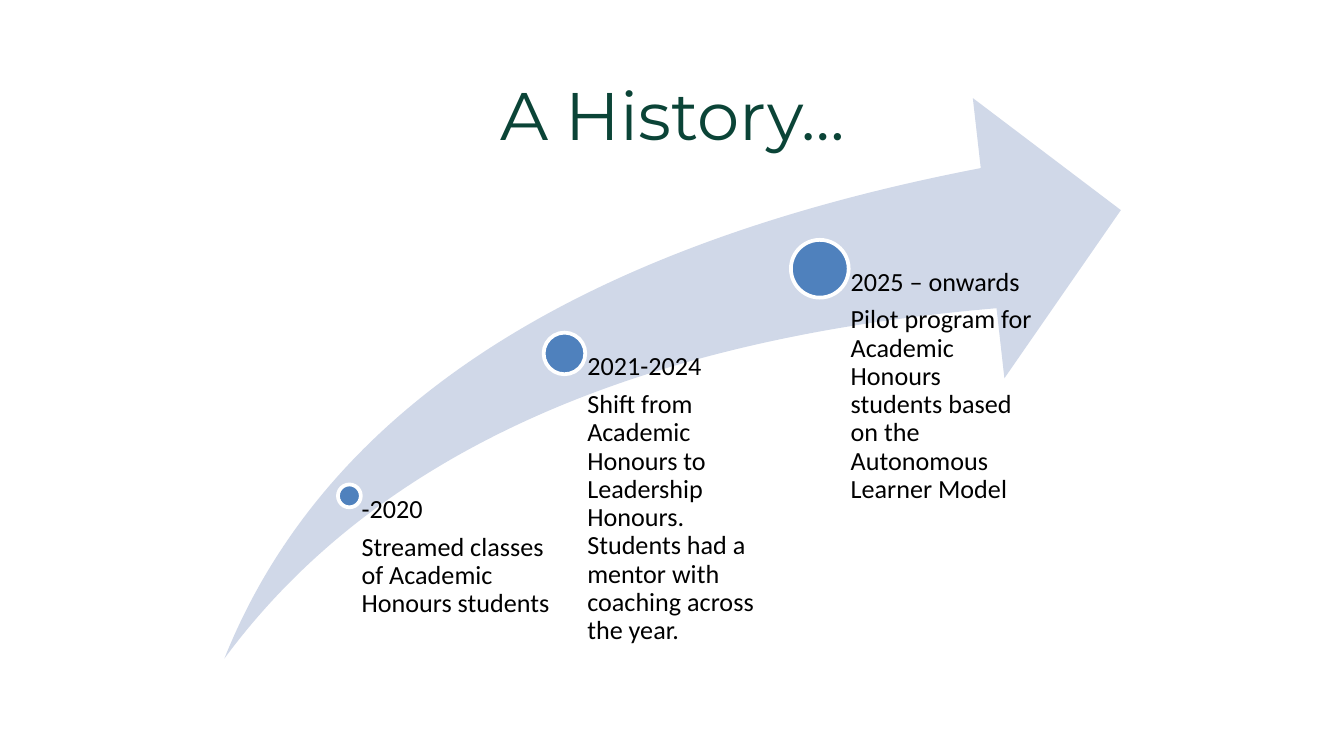
from pptx import Presentation
from pptx.dml.color import RGBColor
from pptx.enum.shapes import MSO_SHAPE as SHAPE
from pptx.enum.text import MSO_ANCHOR as ANCHOR, MSO_AUTO_SIZE as FIT, PP_ALIGN as ALIGN
from pptx.util import Inches, Pt

# Dot centre relative to the arrow box, dot diameter, text inset, text width, date, event
MILESTONES = [
    (0.93, 2.96, 0.17, 0.09, 1.55, "-2020",
     "Streamed classes of Academic Honours students"),
    (2.53, 1.9, 0.31, 0.17, 1.6, "2021-2024",
     "Shift from Academic Honours to Leadership Honours. "
     "Students had a mentor with coaching across the year."),
    (4.43, 1.27, 0.43, 0.23, 1.6, "2025 – onwards",
     "Pilot program for Academic Honours students based on the "
     "Autonomous Learner Model"),
]


def color(value):
    return RGBColor.from_string(value)


def format_font(font, name, size, fill):
    font.name = name
    font.size = Pt(size)
    font.color.rgb = color(fill)


def add_filled(slide, kind, left, top, width, height, fill):
    sp = slide.shapes.add_shape(
        kind, Inches(left), Inches(top), Inches(width), Inches(height))
    sp.shadow.inherit = False
    sp.fill.solid()
    sp.fill.fore_color.rgb = color(fill)
    sp.line.fill.background()
    return sp


def set_title(slide, left, top, width, height):
    title = slide.shapes.title
    title.left, title.top = Inches(left), Inches(top)
    title.width, title.height = Inches(width), Inches(height)
    tf = title.text_frame
    tf.text = "A History…"
    tf.vertical_anchor = ANCHOR.MIDDLE
    tf.auto_size = FIT.NONE
    p = tf.paragraphs[0]
    p.alignment = ALIGN.CENTER
    format_font(p.runs[0].font, "Montserrat", 36, "0B4437")


def add_milestone(slide, x, y, bottom, size, inset, width, date, event):
    # Dot centred on the milestone point
    dot = add_filled(slide, SHAPE.OVAL, x - size / 2, y - size / 2,
                     size, size, "4F81BD")
    dot.line.color.rgb = color("FFFFFF")
    dot.line.width = Pt(2)

    # Date and event, running from the point to the foot of the timeline
    box = slide.shapes.add_textbox(
        Inches(x), Inches(y), Inches(width), Inches(bottom - y))
    tf = box.text_frame
    tf.word_wrap = True
    tf.margin_left = Inches(inset)
    tf.margin_top = tf.margin_right = tf.margin_bottom = 0
    tf.text = f"{date}\n{event}"
    for p in tf.paragraphs:
        p.line_spacing = 0.9
        p.space_after = Pt(5)
        format_font(p.runs[0].font, "Calibri", 14, "000000")


def add_timeline(slide, left, top, width, height):
    # Rising arrow
    arrow = add_filled(slide, SHAPE.SWOOSH_ARROW, left, top, width, height, "D0D8E8")
    arrow.adjustments[0] = 0.25
    arrow.adjustments[1] = 0.25

    for x, y, *details in MILESTONES:
        add_milestone(slide, left + x, top + y, top + height, *details)


def main():
    prs = Presentation()
    # Widescreen, 16:9
    prs.slide_width = Inches(10)
    prs.slide_height = Inches(10 * 9 / 16)
    slide = prs.slides.add_slide(prs.slide_layouts[5])
    set_title(slide, 1.5, 0.49, 7.01, 0.71)
    add_timeline(slide, 1.67, 0.73, 6.67, 4.17)
    prs.save("out.pptx")


if __name__ == "__main__":
    main()
